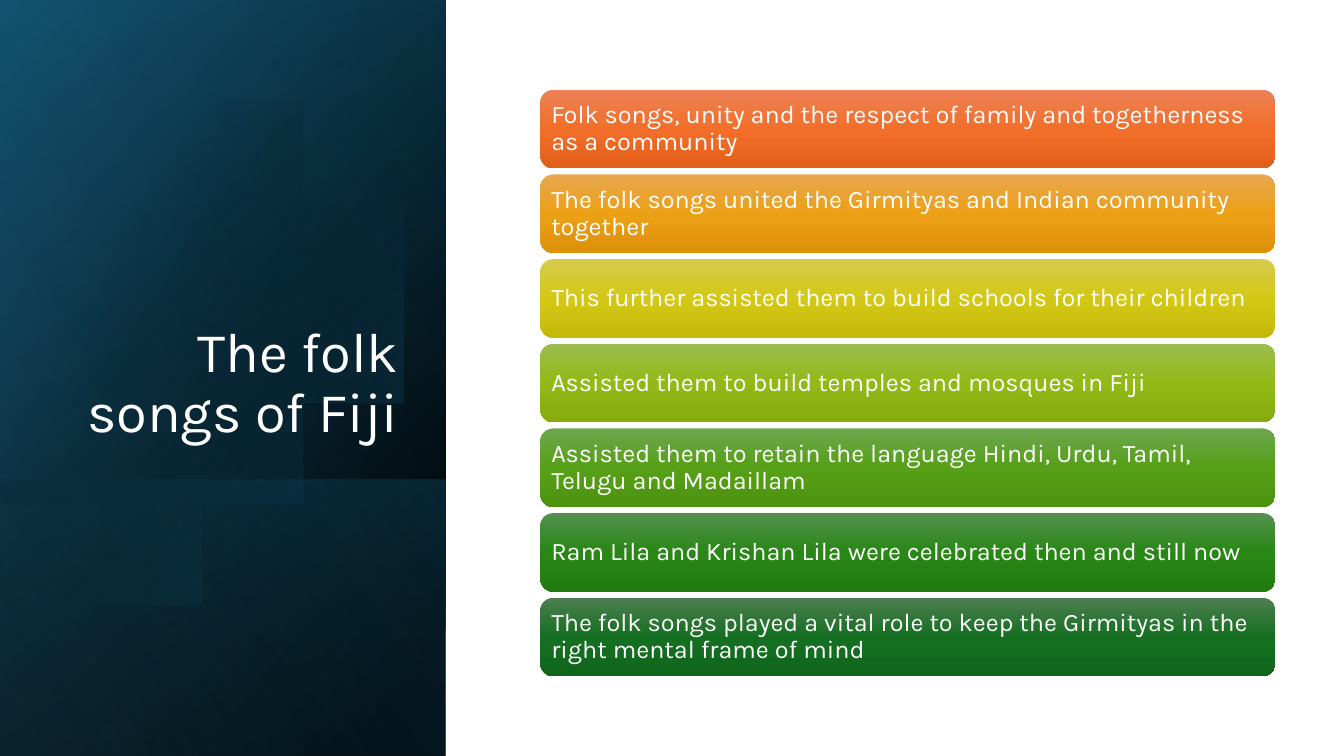
import math

import pptx
import pptx.dml.color
import pptx.enum.shapes
import pptx.enum.text
import pptx.oxml.ns
import pptx.util
from lxml import etree

Inches = pptx.util.Inches
qn = pptx.oxml.ns.qn
RECTANGLE = pptx.enum.shapes.MSO_SHAPE.RECTANGLE
ROUNDED = pptx.enum.shapes.MSO_SHAPE.ROUNDED_RECTANGLE
ALIGN = pptx.enum.text.PP_ALIGN
ANCHOR = pptx.enum.text.MSO_ANCHOR

# Content
TITLE = "The folk songs of Fiji"
# Text, then gradient colours from top to bottom
POINTS = [
    ("Folk songs, unity and the respect of family and togetherness as a community",
     ("ED8257", "F26E29", "E25F1A")),
    ("The folk songs united the Girmityas and Indian community together",
     ("E8A74F", "ECA015", "DD9108")),
    ("This further assisted them to build schools for their children",
     ("D5CB4E", "D4C815", "C4B90B")),
    ("Assisted them to build temples and mosques in Fiji",
     ("9CBD4E", "92B916", "85AB0D")),
    ("Assisted them to retain the language Hindi, Urdu, Tamil, Telugu and Madaillam",
     ("6DA64E", "56A017", "4C930F")),
    ("Ram Lila and Krishan Lila were celebrated then and still now",
     ("53914E", "298716", "217C0F")),
    ("The folk songs played a vital role to keep the Girmityas in the right mental frame of mind",
     ("4D7E50", "156F21", "0F661B")),
]

# Panel layers: top, height, angle, stops as (position, colour, opacity) in percent
PANEL_WIDTH = 4.42
BASE = (0, 7.5, 50, [(8, "000000", 100), (100, "104862", 100)])
SHADE = (0, 7.5, 30, [(0, "000000", 0), (99, "156082", 46)])
FOOT = (4.76, 2.74, 130, [(2, "156082", 29), (100, "000000", 30)])
SHEEN = (0, 7.5, 120, [(0, "000000", 0), (99, "46B1E1", 11)])

# Disc on the panel, cut off at its left
DISC_X, DISC_Y, DISC_RADIUS, DISC_CUT = 1.42, 3.36, 2.29, -0.15
DISC_STOPS = [(29, "000000", 0), (100, "156082", 43)]

# Bars
BAR_LEFT, BAR_TOP, BAR_WIDTH, BAR_HEIGHT, BAR_PITCH = 5.36, 0.89, 7.29, 0.78, 0.84
BAR_INSET = 0.11


def colour(value):
    return pptx.dml.color.RGBColor.from_string(value)


def paint(shape, angle, stops):
    """Fill a shape with a linear gradient, without line or shadow."""
    shape.shadow.inherit = False
    shape.line.fill.background()
    shape.fill.gradient()
    gradient = shape._element.spPr.find(qn("a:gradFill"))
    gradient.clear()
    gradient.set("rotWithShape", "1")
    stop_list = etree.SubElement(gradient, qn("a:gsLst"))
    for position, value, opacity in stops:
        stop = etree.SubElement(stop_list, qn("a:gs"), pos=str(position * 1000))
        tint = etree.SubElement(stop, qn("a:srgbClr"), val=str(colour(value)))
        if opacity < 100:
            etree.SubElement(tint, qn("a:alpha"), val=str(opacity * 1000))
    etree.SubElement(gradient, qn("a:lin"), ang=str(angle * 60000), scaled="0")


def add_layer(page, top, height, angle, stops):
    """Add a panel layer that is mirrored and turned a quarter."""
    left = (PANEL_WIDTH - height) / 2
    turned_top = top + (height - PANEL_WIDTH) / 2
    layer = page.shapes.add_shape(RECTANGLE, Inches(left), Inches(turned_top),
                                  Inches(height), Inches(PANEL_WIDTH))
    layer.rotation = 90
    layer._element.spPr.find(qn("a:xfrm")).set("flipH", "1")
    paint(layer, angle, stops)


def add_disc(page):
    outline = []
    for degree in range(0, 360, 3):
        turn = math.radians(degree)
        x = max(DISC_CUT, DISC_X + DISC_RADIUS * math.cos(turn))
        outline.append((x, DISC_Y + DISC_RADIUS * math.sin(turn)))
    builder = page.shapes.build_freeform(*outline[0], scale=Inches(1))
    builder.add_line_segments(outline[1:], close=True)
    paint(builder.convert_to_shape(), 30, DISC_STOPS)


def write(box, text, size, align, anchor):
    frame = box.text_frame
    frame.word_wrap = True
    frame.vertical_anchor = anchor
    para = frame.paragraphs[0]
    para.text = text
    para.alignment = align
    para.line_spacing = 0.9
    para.font.name = "Karla"
    para.font.size = pptx.util.Pt(size)
    para.font.color.rgb = colour("FFFFFF")
    return frame


def main():
    deck = pptx.Presentation()
    deck.slide_width, deck.slide_height = Inches(13.33), Inches(7.5)
    page = deck.slides.add_slide(deck.slide_layouts[6])

    # Left panel
    for layer in (BASE, SHADE, FOOT):
        add_layer(page, *layer)
    add_disc(page)
    add_layer(page, *SHEEN)

    # Title
    title = page.shapes.add_textbox(Inches(0.64), Inches(1.84), Inches(3.41), Inches(2.62))
    write(title, TITLE, 40, ALIGN.RIGHT, ANCHOR.BOTTOM)

    # Bars
    for row, (text, shades) in enumerate(POINTS):
        bar = page.shapes.add_shape(ROUNDED, Inches(BAR_LEFT), Inches(BAR_TOP + row * BAR_PITCH),
                                    Inches(BAR_WIDTH), Inches(BAR_HEIGHT))
        paint(bar, 90, [(50 * step, shade, 100) for step, shade in enumerate(shades)])
        frame = write(bar, text, 18, ALIGN.LEFT, ANCHOR.MIDDLE)
        # The preset's own text area already sits 0.04 inside the bar
        frame.margin_left = frame.margin_right = Inches(BAR_INSET - 0.04)
        frame.margin_top = frame.margin_bottom = Inches(BAR_INSET - 0.04)

    deck.save("out.pptx")


if __name__ == "__main__":
    main()
